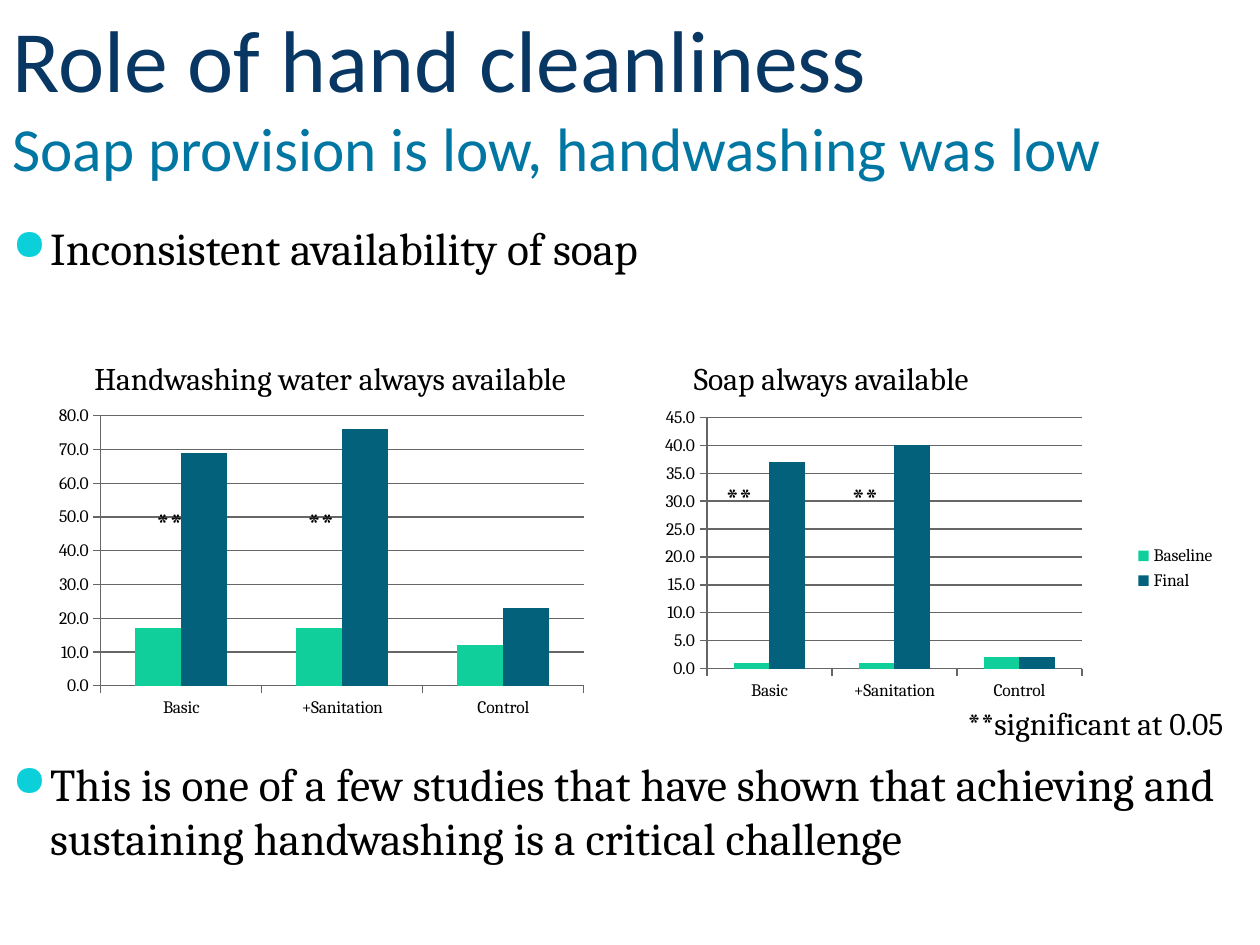
from dataclasses import dataclass

from lxml.etree import SubElement
from pptx import Presentation
from pptx.chart.data import CategoryChartData
from pptx.dml.color import RGBColor
from pptx.enum.chart import XL_CHART_TYPE, XL_LEGEND_POSITION, XL_TICK_MARK
from pptx.oxml import parse_xml
from pptx.oxml.ns import nsdecls, qn
from pptx.util import Inches, Pt


@dataclass(frozen=True)
class Theme:
    heading_font: str = "Calibri"
    body_font: str = "Cambria"
    title: str = "083763"
    subtitle: str = "0076A3"
    text: str = "000000"
    bullet: str = "0BD0D9"
    grid: str = "666666"
    series: tuple = ("10CF9B", "04617B")
    title_size: int = 50
    subtitle_size: int = 35
    bullet_size: int = 26
    label_size: int = 18
    chart_size: int = 10


def set_font(font, name, size, color):
    font.name = name
    font.size = Pt(size)
    font.color.rgb = RGBColor.from_string(color)


class SlideBuilder:
    def __init__(self, page, theme):
        self.page = page
        self.theme = theme

    def text_frame(self, left, top, width, height, wrap=True):
        box = self.page.shapes.add_textbox(
            Inches(left), Inches(top), Inches(width), Inches(height))
        box.text_frame.word_wrap = wrap
        return box.text_frame

    def title(self, heading, subheading):
        theme = self.theme
        frame = self.text_frame(0.1, -0.01, 9.9, 1.71)
        frame.margin_left = frame.margin_right = frame.margin_bottom = 0
        para = frame.paragraphs[0]
        span = para.add_run()
        span.text = heading
        set_font(span.font, theme.heading_font, theme.title_size, theme.title)
        para.add_line_break()
        span = para.add_run()
        span.text = subheading
        set_font(span.font, theme.heading_font, theme.subtitle_size, theme.subtitle)

    def bullet(self, text, top, height):
        theme = self.theme
        para = self.text_frame(0, top, 9.94, height).paragraphs[0]
        para.text = text
        set_font(para.font, theme.body_font, theme.bullet_size, theme.text)
        para.space_before = Pt(0.2 * theme.bullet_size)
        properties = para._p.get_or_add_pPr()
        properties.set("marL", str(Inches(0.3)))
        properties.set("indent", str(Inches(-0.3)))
        marks = [
            f'<a:buClr {nsdecls("a")}><a:srgbClr val="{theme.bullet}"/></a:buClr>',
            f'<a:buSzPct {nsdecls("a")} val="95000"/>',
            f'<a:buChar {nsdecls("a")} char="●"/>',
        ]
        position = properties.index(properties.find(qn("a:spcBef"))) + 1
        for offset, mark in enumerate(marks):
            properties.insert(position + offset, parse_xml(mark))

    def label(self, text, left, top, width):
        para = self.text_frame(left, top, width, 0.4, wrap=False).paragraphs[0]
        para.text = text
        set_font(para.font, self.theme.body_font, self.theme.label_size, self.theme.text)

    def column_chart(self, place, baseline, final, top_value, step):
        theme = self.theme
        data = CategoryChartData(number_format="0.0")
        data.categories = ["Basic", "+Sanitation", "Control"]
        data.add_series("Baseline", baseline)
        data.add_series("Final", final)
        chart = self.page.shapes.add_chart(
            XL_CHART_TYPE.COLUMN_CLUSTERED, *map(Inches, place), data).chart
        set_font(chart.font, theme.body_font, theme.chart_size, theme.text)
        chart.has_title = False
        chart.has_legend = False
        plot = chart.plots[0]
        plot.gap_width = 150
        plot.vary_by_categories = False
        for series, color in zip(plot.series, theme.series):
            series.format.fill.solid()
            series.format.fill.fore_color.rgb = RGBColor.from_string(color)
        values = chart.value_axis
        values.minimum_scale, values.maximum_scale = 0, top_value
        values.major_unit = step
        values.tick_labels.number_format = "0.0"
        values.tick_labels.number_format_is_linked = False
        values.has_major_gridlines = True
        for axis in (chart.category_axis, values):
            axis.major_tick_mark = XL_TICK_MARK.OUTSIDE
        for part in (chart.category_axis, values, values.major_gridlines):
            part.format.line.color.rgb = RGBColor.from_string(theme.grid)
            part.format.line.width = Pt(0.75)
        return chart

    def legend(self, chart):
        chart.has_legend = True
        chart.legend.position = XL_LEGEND_POSITION.RIGHT
        chart.legend.include_in_layout = False

    def plot_area(self, chart, **fractions):
        """Fix the inner plot area as fractions x, y, w and h of the chart."""
        area = chart._chartSpace.chart.plotArea
        layout = area.find(qn("c:layout"))
        if layout is None:
            layout = parse_xml(f'<c:layout {nsdecls("c")}/>')
            area.insert(0, layout)
        manual = SubElement(layout, qn("c:manualLayout"))
        settings = {"layoutTarget": "inner", "xMode": "edge", "yMode": "edge", **fractions}
        for name, value in settings.items():
            SubElement(manual, qn(f"c:{name}")).set("val", str(value))


def main():
    deck = Presentation()
    deck.slide_width, deck.slide_height = Inches(10), Inches(7.5)
    page = deck.slides.add_slide(deck.slide_layouts[6])
    builder = SlideBuilder(page, Theme())

    builder.title("Role of hand cleanliness", "Soap provision is low, handwashing was low")
    builder.bullet("Inconsistent availability of soap", 1.7, 1.2)

    builder.column_chart((0.38, 3.17, 4.34, 2.58), (17, 17, 12), (69, 76, 23), 80, 10)
    soap_chart = builder.column_chart(
        (5.1, 3.18, 4.65, 2.66), (1, 1, 2), (37, 40, 2), 45, 5)
    builder.legend(soap_chart)
    builder.plot_area(soap_chart, x=0.11, y=0.05, w=0.64, h=0.75)

    builder.label("Handwashing water always available", 0.65, 2.8, 4.2)
    builder.label("Soap always available", 5.41, 2.8, 2.54)
    builder.label("**significant at 0.05", 7.58, 5.54, 2.36)
    for left, top in ((1.14, 3.95), (2.34, 3.95), (5.66, 3.75), (6.66, 3.75)):
        builder.label("**", left, top, 0.42)

    builder.bullet(
        "This is one of a few studies that have shown that achieving and "
        "sustaining handwashing is a critical challenge", 5.95, 1.23)
    deck.save("out.pptx")


if __name__ == "__main__":
    main()
